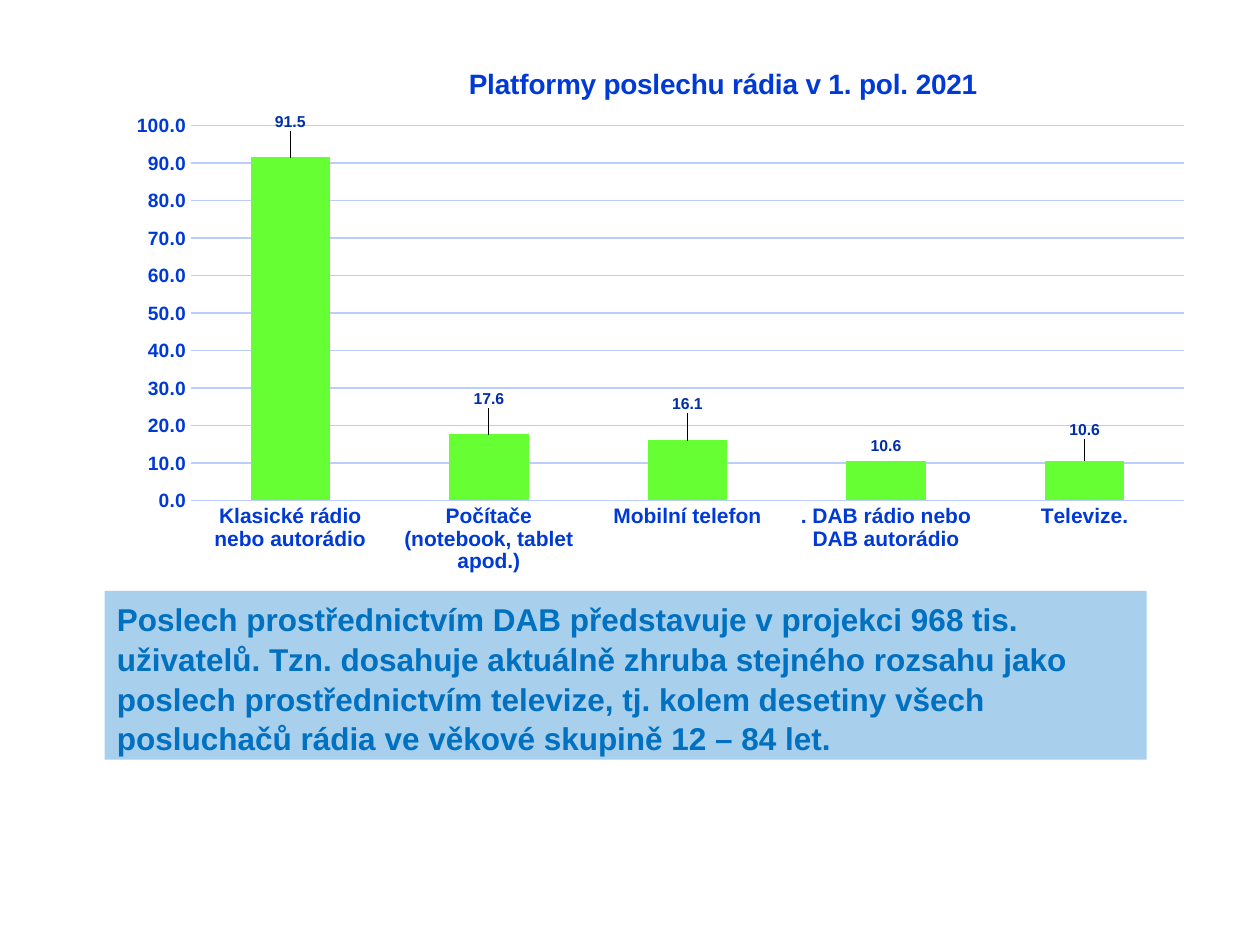
import pptx
import pptx.chart.data
import pptx.dml.color
import pptx.enum.chart
import pptx.enum.shapes
import pptx.enum.text
import pptx.oxml
import pptx.oxml.ns
import pptx.util
from pptx.util import Inches

RGB = pptx.dml.color.RGBColor
BLUE = RGB(0x00, 0x3A, 0xD6)
NAVY = RGB(0x00, 0x2E, 0xA9)
INK = RGB(0x00, 0x0F, 0x37)
GRID = RGB(0xBB, 0xCD, 0xFF)
GREEN = RGB(0x66, 0xFF, 0x33)
SKY = RGB(0xA8, 0xCF, 0xEC)
AZURE = RGB(0x00, 0x70, 0xC0)
FORMAT = "#,##0.0"

BARS = [
    ("Klasické rádio nebo autorádio", 91.5, -0.04),
    ("Počítače (notebook, tablet apod.)", 17.6, -0.04),
    ("Mobilní telefon", 16.1, -0.04),
    (". DAB rádio nebo DAB autorádio", 10.6, 0),
    ("Televize.", 10.6, -0.03),
]
NOTE = (
    "Poslech prostřednictvím DAB představuje v projekci 968 tis. uživatelů. "
    "Tzn. dosahuje aktuálně zhruba stejného rozsahu jako poslech "
    "prostřednictvím televize, tj. kolem desetiny všech posluchačů rádia "
    "ve věkové skupině 12 – 84 let."
)


def style(font, size, color, bold=True):
    """Set the look of a font."""
    font.name = "Arial"
    font.size = pptx.util.Pt(size)
    font.bold = bold
    font.color.rgb = color


def write(frame, text, size, color, bold=True, spacing=None):
    """Write one left-aligned paragraph into a text frame."""
    para = frame.paragraphs[0]
    para.alignment = pptx.enum.text.PP_ALIGN.LEFT
    para.line_spacing = spacing
    run = para.add_run()
    run.text = text
    style(run.font, size, color, bold)


def layout(**parts):
    """Make a manual chart layout from its named parts."""
    inner = "".join(f'<c:{key} val="{val}"/>' for key, val in parts.items())
    space = pptx.oxml.ns.nsdecls("c")
    return pptx.oxml.parse_xml(
        f"<c:layout {space}><c:manualLayout>{inner}</c:manualLayout></c:layout>"
    )


def place(node, before, item):
    """Put a layout into a chart node ahead of its named child."""
    for old in node.findall(pptx.oxml.ns.qn("c:layout")):
        node.remove(old)
    node.find(pptx.oxml.ns.qn(before)).addprevious(item)


def add_title(chart, text):
    """Place the chart title."""
    chart.has_title = True
    write(chart.chart_title.text_frame, text, 16, BLUE)
    chart.chart_title.include_in_layout = False
    place(chart.chart_title._element, "c:overlay",
          layout(xMode="edge", yMode="edge", x=0.32, y=0.03))


def set_axes(chart):
    """Format both axes and the grid lines."""
    for axis, size in ((chart.category_axis, 12), (chart.value_axis, 11)):
        axis.major_tick_mark = pptx.enum.chart.XL_TICK_MARK.NONE
        axis.minor_tick_mark = pptx.enum.chart.XL_TICK_MARK.NONE
        axis.format.line.fill.background()
        style(axis.tick_labels.font, size, BLUE)
    scale = chart.value_axis
    scale.minimum_scale, scale.maximum_scale, scale.major_unit = 0, 100, 10
    scale.tick_labels.number_format = FORMAT
    scale.tick_labels.number_format_is_linked = False
    scale.has_major_gridlines = True
    scale.major_gridlines.format.line.color.rgb = GRID
    scale.major_gridlines.format.line.width = pptx.util.Pt(0.75)


def set_bars(plot):
    """Format the columns and their shifted value labels."""
    plot.gap_width = 150
    plot.vary_by_categories = False
    series = plot.series[0]
    series.format.fill.solid()
    series.format.fill.fore_color.rgb = GREEN
    labels = series.data_labels
    labels.show_value = True
    labels.number_format = FORMAT
    labels.number_format_is_linked = False
    style(labels.font, 9, NAVY)
    for index, (_, _, shift) in enumerate(BARS):
        label = series.points[index].data_label
        style(label.font, 9, NAVY)
        label.position = pptx.enum.chart.XL_LABEL_POSITION.OUTSIDE_END
        if shift:
            node = labels._element.findall(pptx.oxml.ns.qn("c:dLbl"))[index]
            first = node.find(pptx.oxml.ns.qn("c:idx"))
            first.addnext(layout(x=0, y=shift))


def add_bars(slide, left, top, width, height):
    """Place the column chart in its box."""
    data = pptx.chart.data.CategoryChartData(number_format=FORMAT)
    data.categories = [name for name, _, _ in BARS]
    data.add_series("Series 1", [value for _, value, _ in BARS])
    kind = pptx.enum.chart.XL_CHART_TYPE.COLUMN_CLUSTERED
    chart = slide.shapes.add_chart(kind, left, top, width, height, data).chart
    chart.has_legend = False
    style(chart.font, 10, INK, bold=False)
    add_title(chart, "Platformy poslechu rádia v 1. pol. 2021")
    set_axes(chart)
    set_bars(chart.plots[0])
    place(chart.plots[0]._element.getparent(), "c:barChart",
          layout(layoutTarget="inner", xMode="edge", yMode="edge",
                 x=0.07, y=0.15, w=0.91, h=0.7))


def add_note(slide, left, top, width, height):
    """Place the filled comment box."""
    kind = pptx.enum.shapes.MSO_SHAPE.RECTANGLE
    box = slide.shapes.add_shape(kind, left, top, width, height)
    box.shadow.inherit = False
    box.fill.solid()
    box.fill.fore_color.rgb = SKY
    box.line.fill.background()
    frame = box.text_frame
    frame.word_wrap = True
    frame.vertical_anchor = pptx.enum.text.MSO_ANCHOR.TOP
    frame.margin_left = frame.margin_right = Inches(0.1)
    frame.margin_top, frame.margin_bottom = Inches(0.06), Inches(0.1)
    write(frame, NOTE, 18, AZURE, spacing=1.05)


def main():
    """Build and save the slide."""
    deck = pptx.Presentation()
    deck.slide_width, deck.slide_height = Inches(10), Inches(7.5)
    slide = deck.slides.add_slide(deck.slide_layouts[6])
    add_bars(slide, Inches(0.91), Inches(0.36), Inches(8.66), Inches(4.25))
    add_note(slide, Inches(0.83), Inches(4.69), Inches(8.27), Inches(1.34))
    deck.save("out.pptx")


if __name__ == "__main__":
    main()
